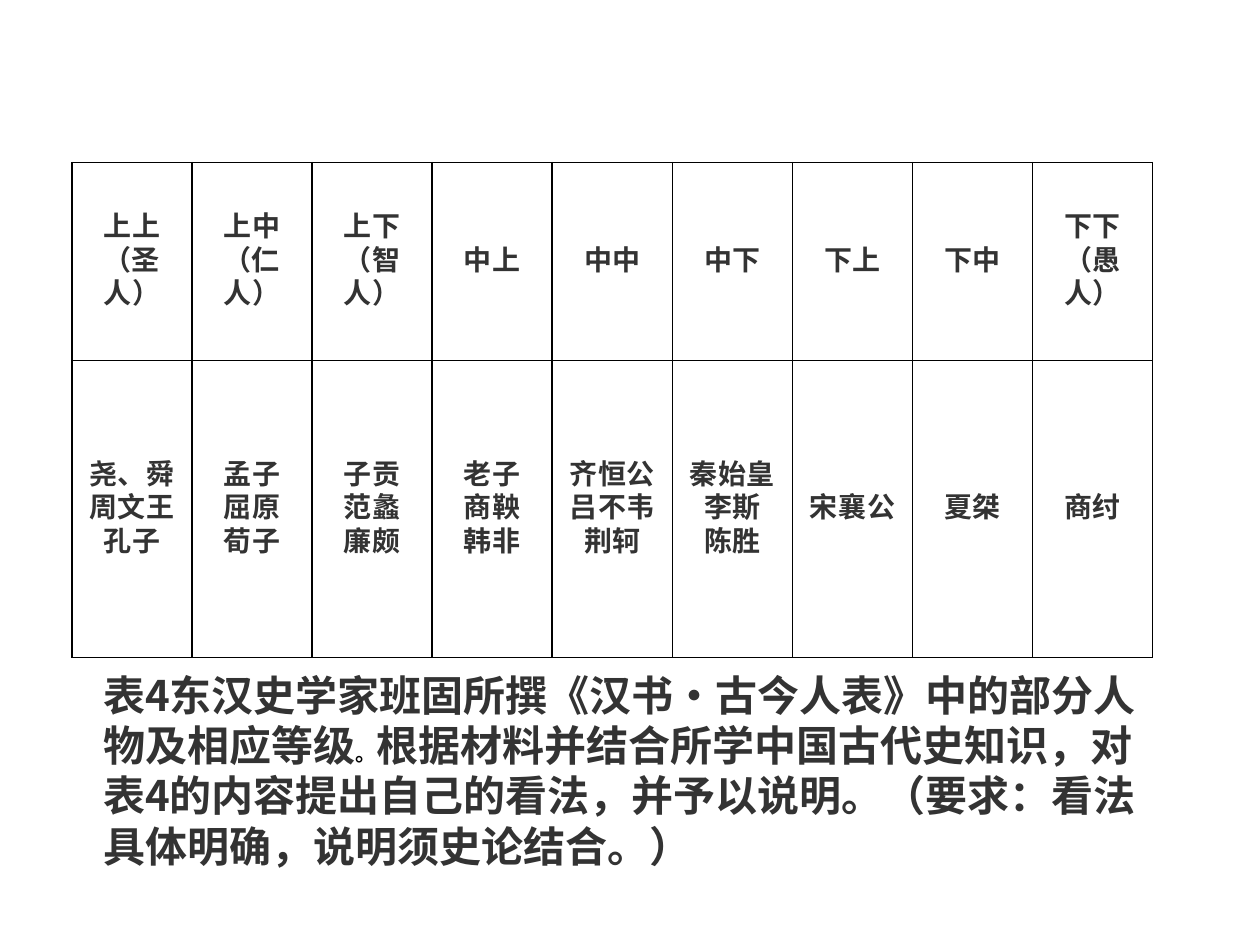
from lxml.etree import SubElement
from pptx import Presentation
from pptx.dml.color import RGBColor
from pptx.enum.lang import MSO_LANGUAGE_ID
from pptx.enum.text import MSO_ANCHOR, MSO_AUTO_SIZE, PP_ALIGN
from pptx.oxml.ns import qn
from pptx.util import Inches, Pt

COLORS = {"text": "333333", "line": "000000", "cell": "FFFFFF"}
LATIN, CHINESE = "Calibri", "Noto Sans CJK SC"


def add_run(paragraph, text, size, font=LATIN, color="text"):
    run = paragraph.add_run()
    run.text = text
    run.font.size = Pt(size)
    run.font.bold = True
    run.font.name = font
    run.font.color.rgb = RGBColor.from_string(COLORS[color])
    run.font.language_id = MSO_LANGUAGE_ID.SIMPLIFIED_CHINESE
    properties = run.font._element
    SubElement(properties, qn("a:ea")).set("typeface", CHINESE)
    return properties


def format_cell(cell):
    cell.vertical_anchor = MSO_ANCHOR.MIDDLE
    cell.margin_left = cell.margin_right = Inches(0.07)
    cell.margin_top = cell.margin_bottom = 0
    properties = cell._tc.get_or_add_tcPr()
    for side in ("a:lnL", "a:lnR", "a:lnT", "a:lnB"):
        border = SubElement(properties, qn(side), w=str(Pt(1)))
        line_fill = SubElement(border, qn("a:solidFill"))
        SubElement(line_fill, qn("a:srgbClr"), val=COLORS["line"])
    cell.fill.solid()
    cell.fill.fore_color.rgb = RGBColor.from_string(COLORS["cell"])


presentation = Presentation()
presentation.slide_width, presentation.slide_height = Inches(10), Inches(7.5)
slide = presentation.slides.add_slide(presentation.slide_layouts[6])

ranks = [
    (["上上", "（圣人）"], ["尧、舜", "周文王", "孔子"]),
    (["上中", "（仁人）"], ["孟子", "屈原", "荀子"]),
    (["上下", "（智人）"], ["子贡", "范蠡", "廉颇"]),
    (["中上"], ["老子", "商鞅", "韩非"]),
    (["中中"], ["齐恒公", "吕不韦", "荆轲"]),
    (["中下"], ["秦始皇", "李斯", "陈胜"]),
    (["下上"], ["宋襄公"]),
    (["下中"], ["夏桀"]),
    (["下下", "（愚人）"], ["商纣"]),
]
row_heights = [1.57, 2.36]
table = slide.shapes.add_table(
    len(row_heights), len(ranks), Inches(0.57), Inches(1.29),
    Inches(8.58), Inches(sum(row_heights))).table
for row, height in zip(table.rows, row_heights):
    row.height = Inches(height)

for column_index, rank in enumerate(ranks):
    for row_index, lines in enumerate(rank):
        cell = table.cell(row_index, column_index)
        format_cell(cell)
        for line_index, line in enumerate(lines):
            frame = cell.text_frame
            paragraph = frame.add_paragraph() if line_index else frame.paragraphs[0]
            paragraph.alignment = PP_ALIGN.CENTER
            paragraph.line_spacing = Pt(19.1)
            add_run(paragraph, line, 16).set("spc", "40")

question = slide.shapes.add_textbox(Inches(0.72), Inches(5.25), Inches(8.43), Inches(1.72))
frame = question.text_frame
frame.word_wrap = True
frame.auto_size = MSO_AUTO_SIZE.SHAPE_TO_FIT_TEXT
frame.vertical_anchor = MSO_ANCHOR.MIDDLE
paragraph = frame.paragraphs[0]
for text, size, font, color in [
    ("表", 24, LATIN, "text"),
    ("4", 24, CHINESE, "text"),
    ("东汉史学家班固所撰《汉书", 24, LATIN, "text"),
    ("·", 24, CHINESE, "text"),
    ("古今人表》中的部分人物及相应等级", 24, LATIN, "text"),
    ("。", 12, "Arial", "line"),
    ("根据材料并结合所学中国古代史知识，对表", 24, LATIN, "text"),
    ("4", 24, CHINESE, "text"),
    ("的内容提出自己的看法，并予以说明。（要求：看法具体明确，说明须史论结合。）", 24, LATIN, "text"),
]:
    add_run(paragraph, text, size, font, color)

presentation.save("out.pptx")
